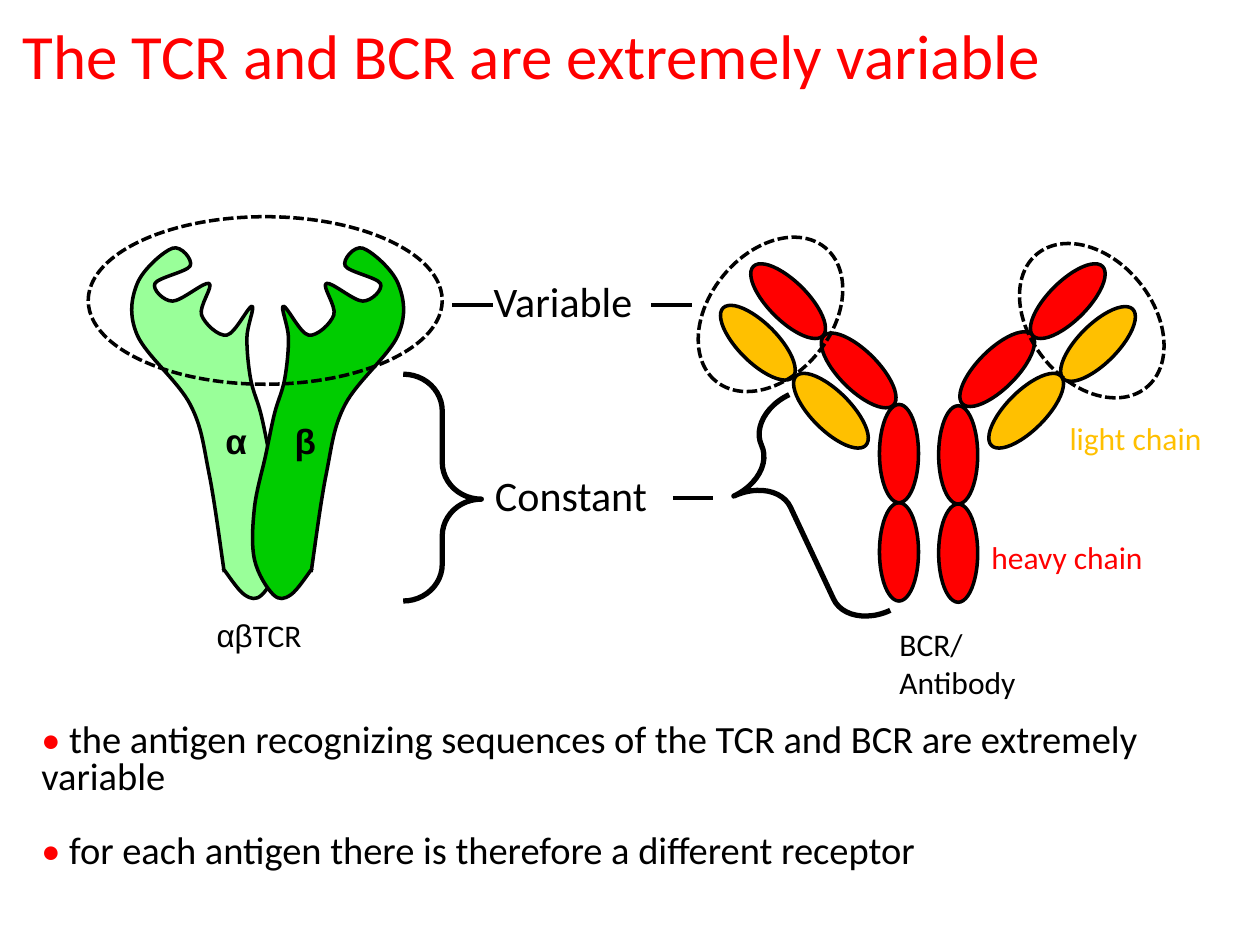
from pptx import Presentation
from pptx.dml.color import RGBColor
from pptx.enum.dml import MSO_LINE
from pptx.enum.shapes import MSO_CONNECTOR, MSO_SHAPE
from pptx.enum.text import MSO_AUTO_SIZE
from pptx.oxml.ns import qn
from pptx.util import Inches, Pt
from lxml.etree import SubElement

BLACK, RED, AMBER = "000000", "FF0000", "FFC000"
LIGHT_GREEN, GREEN = "99FF99", "00CC00"
colour = RGBColor.from_string

deck = Presentation()
deck.slide_width, deck.slide_height = Inches(10), Inches(7.5)
page = deck.slides.add_slide(deck.slide_layouts[6])

# The page is a grid of 10 columns by 7.5 rows of equal cells.
cell = deck.slide_width // 10


def style(shape, weight, fill=None):
    """Give a shape a black outline and either a plain fill or none."""
    shape.shadow.inherit = False
    shape.line.color.rgb = colour(BLACK)
    shape.line.width = Pt(weight)
    if fill:
        shape.fill.solid()
        shape.fill.fore_color.rgb = colour(fill)
    else:
        shape.fill.background()


def add_preset(parent, kind, box, turn, flipped, weight, fill=None):
    shape = parent.shapes.add_shape(kind, *(round(value * cell) for value in box))
    shape.rotation = turn
    if flipped:
        shape.element.spPr.find(qn("a:xfrm")).set("flipH", "1")
    style(shape, weight, fill)
    return shape


# Antibody: each domain has a left and a right copy
antibody = page.shapes.add_group_shape()
domains = [
    ((6.98, 3.99), (7.45, 4.00), 0, RED),
    ((6.98, 3.21), (7.45, 3.22), 0, RED),
    ((6.66, 2.55), (7.76, 2.54), 45, RED),
    ((6.10, 2.00), (8.32, 2.00), 45, RED),
    ((6.44, 2.87), (7.99, 2.87), 45, AMBER),
    ((5.86, 2.33), (8.56, 2.34), 45, AMBER),
]
for side in (0, 1):
    for domain in domains:
        tilt, fill = domain[2:]
        turn = tilt if side else -tilt
        box = (*domain[side], 0.31, 0.78)
        add_preset(antibody, MSO_SHAPE.OVAL, box, turn, side == 1, 2, fill)

# T cell receptor: a smooth curve through the anchors, mirrored for the beta chain
receptor = page.shapes.add_group_shape()
anchors = [
    (1.78, 4.54), (1.66, 3.76), (1.51, 3.21), (1.09, 2.66), (1.09, 2.25),
    (1.37, 1.97), (1.51, 2.11), (1.23, 2.25), (1.37, 2.39), (1.66, 2.25),
    (1.60, 2.50), (1.80, 2.66), (2.00, 2.43), (1.96, 2.68), (1.99, 3.01),
    (2.07, 3.28), (2.14, 3.61), (2.23, 4.03), (2.23, 4.44), (2.08, 4.72),
    (1.94, 4.72), (1.77, 4.51),
]
chain_top, chain_width, chain_height = 1.95, 1.23, 2.81
for mirrored, chain_left, fill in ((False, 1.02, LIGHT_GREEN), (True, 2.01, GREEN)):
    points = [
        (round((4.25 - x if mirrored else x) * cell), round(y * cell))
        for x, y in anchors
    ]
    builder = receptor.shapes.build_freeform(*points[0])
    builder.add_line_segments(points[1:], close=False)
    chain = builder.convert_to_shape()
    chain.left, chain.top = round(chain_left * cell), round(chain_top * cell)
    chain.width, chain.height = round(chain_width * cell), round(chain_height * cell)
    style(chain, 2, fill)

    # Turn the straight segments into cubic curves
    outline = next(chain.element.iter(qn("a:path")))
    outline.clear()
    outline.set("w", str(chain.width))
    outline.set("h", str(chain.height))
    commands = [("a:moveTo", points[:1])]
    padded = [points[0], *points, points[-1]]
    for before, start, end, after in zip(padded, padded[1:], padded[2:], padded[3:]):
        leaving = [b + (c - a) / 6 for a, b, c in zip(before, start, end)]
        arriving = [c - (d - b) / 6 for b, c, d in zip(start, end, after)]
        commands.append(("a:cubicBezTo", [leaving, arriving, end]))
    for tag, stops in commands:
        command = SubElement(outline, qn(tag))
        for x, y in stops:
            SubElement(command, qn("a:pt"), x=str(round(x - chain.left)),
                       y=str(round(y - chain.top)))

# Dashed rings around the variable regions
for box, turn, flipped in (
    ((0.70, 1.72, 2.81, 1.33), 0, False),
    ((5.43, 2.01, 1.37, 0.97), 309.3, False),
    ((7.98, 2.06, 1.37, 0.97), 50.7, True),
):
    ring = add_preset(page, MSO_SHAPE.OVAL, box, turn, flipped, 2)
    ring.line.dash_style = MSO_LINE.SQUARE_DOT

# Braces around the constant regions
for box, turn, tip, flipped in (
    ((3.20, 2.97, 0.62, 1.80), 0, 0.551, False),
    ((5.96, 3.20, 0.74, 1.89), 334.9, 0.287, True),
):
    brace = add_preset(page, MSO_SHAPE.RIGHT_BRACE, box, turn, flipped, 3)
    brace.adjustments[0] = 0.471
    brace.adjustments[1] = tip

# Dashes beside the region names
for left, top in ((3.59, 2.42), (5.17, 2.42), (5.34, 3.95)):
    x, y = round(left * cell), round(top * cell)
    dash = page.shapes.add_connector(
        MSO_CONNECTOR.STRAIGHT, x, y, x + round(0.32 * cell), y)
    dash.line.color.rgb = colour(BLACK)
    dash.line.width = Pt(2.25)
    SubElement(dash.element.spPr, qn("a:effectLst"))

# Texts: parent, box, size, bold, paragraphs of runs (text, font, colour)
title = (page, (0.08, 0.08, 8.35, 0.71), 36, False,
         [[("The TCR and BCR are extremely variable", "Calibri", RED)]])
labels = [
    (antibody, (7.77, 4.22, 2.08, 0.39), 18, False,
     [[("heavy chain", "Calibri", RED)]]),
    (antibody, (8.39, 3.28, 1.33, 0.39), 18, False,
     [[("light chain", "Calibri", AMBER)]]),
    (page, (7.04, 4.91, 1.51, 0.40), 18, False,
     [[("BCR/Antibody", "Calibri", BLACK)]]),
    (page, (1.62, 4.84, 1.51, 0.40), 18, False,
     [[("αβ", "Arial", BLACK), ("TCR", "Calibri", BLACK)]]),
    (page, (1.69, 3.28, 1.51, 0.40), 20, True, [[("α", "Arial", BLACK)]]),
    (page, (2.24, 3.28, 1.51, 0.40), 20, True, [[("β", "Arial", BLACK)]]),
    (page, (3.82, 2.14, 1.51, 0.40), 24, False, [[("Variable", "Calibri", BLACK)]]),
    (page, (3.83, 3.68, 1.82, 0.40), 24, False, [[("Constant", "Calibri", BLACK)]]),
]
statements = [
    " the antigen recognizing sequences of the TCR and BCR are extremely variable",
    " for each antigen there is therefore a different receptor",
]
summary = (page, (0.23, 5.70, 9.77, 0.39), 22, False,
           [[("•", "Calibri", RED), (words, "Calibri", BLACK)] for words in statements])
for entry in (title, *labels, summary):
    parent, box, size, bold, paragraphs = entry
    frame = parent.shapes.add_textbox(
        *(round(value * cell) for value in box)).text_frame
    frame.word_wrap = entry is not title
    if entry is title:
        frame.auto_size = MSO_AUTO_SIZE.SHAPE_TO_FIT_TEXT
    for index, runs in enumerate(paragraphs):
        para = frame.add_paragraph() if index else frame.paragraphs[0]
        if entry is summary:
            para.line_spacing = 0.8
            para.space_before = Pt(21 * index)
        for words, font, ink in runs:
            span = para.add_run()
            span.text = words
            span.font.name = font
            span.font.size = Pt(size)
            span.font.bold = bold
            span.font.color.rgb = colour(ink)

deck.save("out.pptx")
